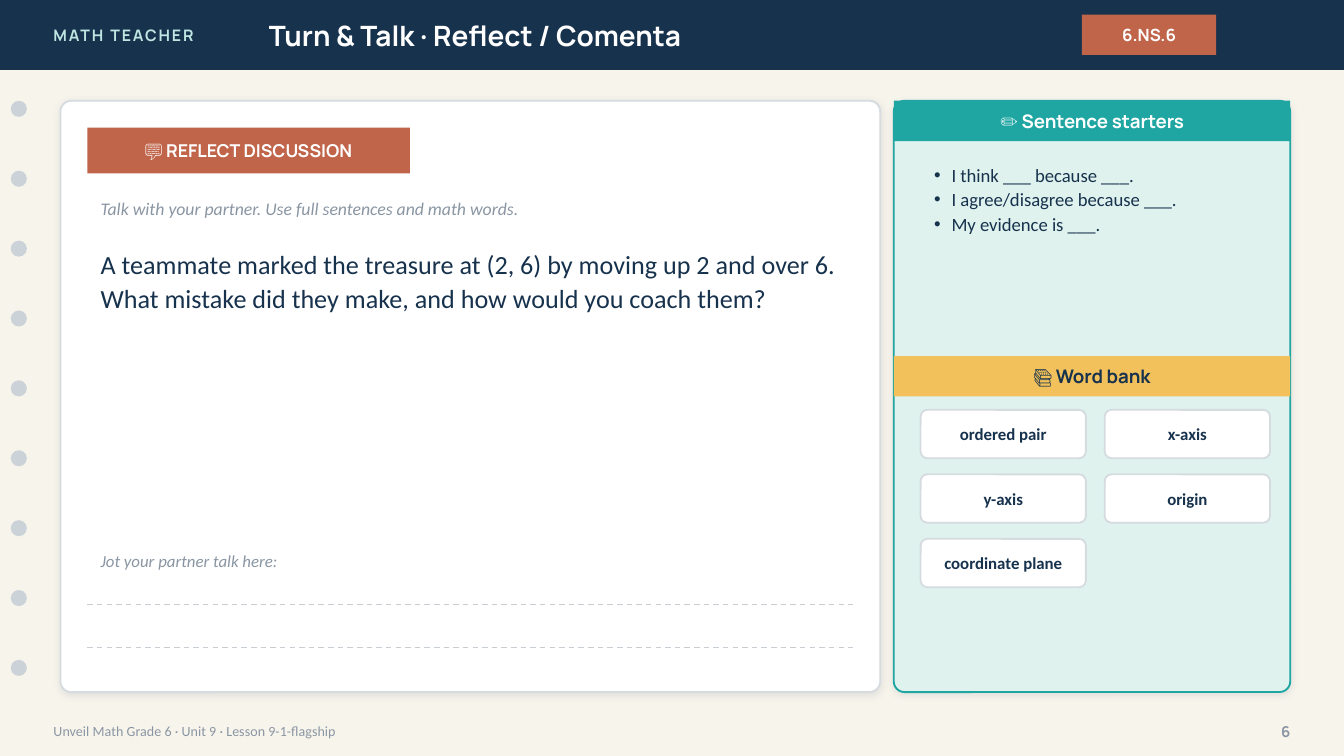
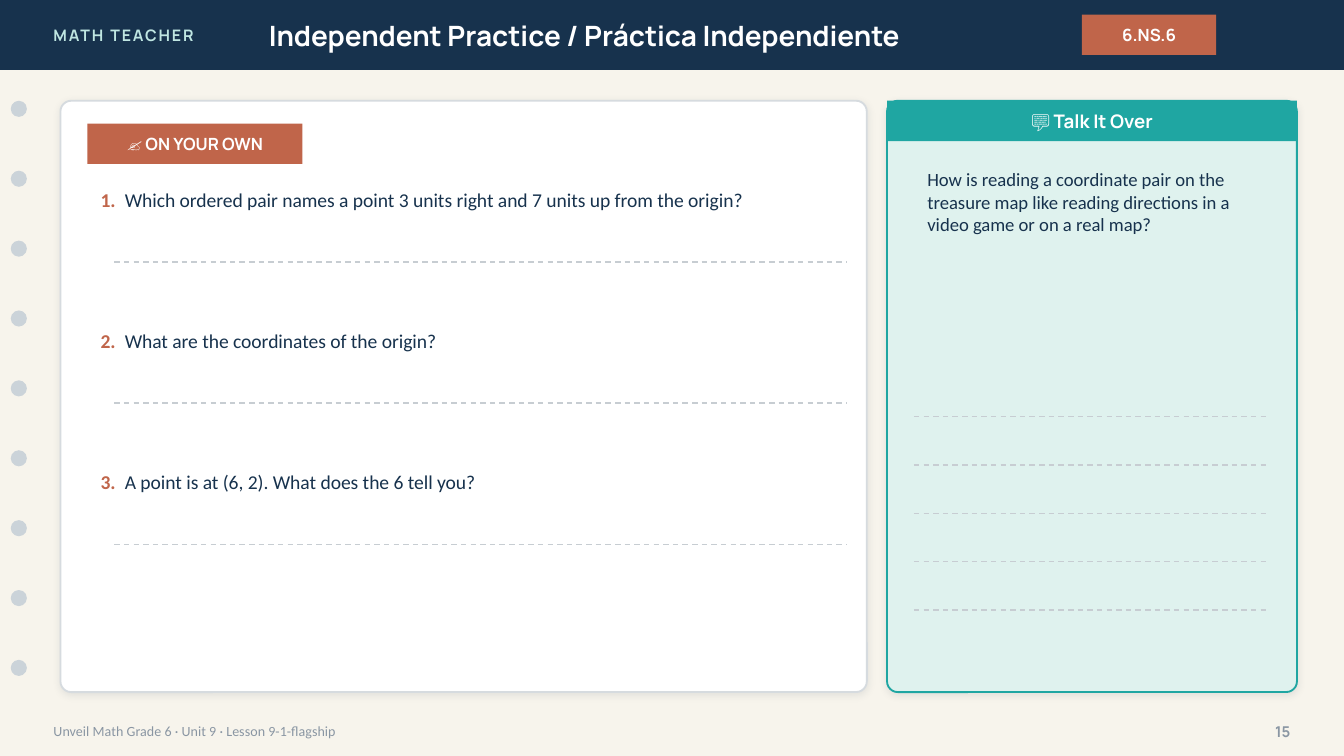
from dataclasses import dataclass, replace
from typing import NamedTuple, Optional

from lxml.etree import SubElement
from pptx import Presentation
from pptx.dml.color import RGBColor
from pptx.enum.dml import MSO_LINE
from pptx.enum.shapes import MSO_CONNECTOR, MSO_SHAPE
from pptx.enum.text import MSO_ANCHOR as Anchor, MSO_AUTO_SIZE, PP_ALIGN as Align
from pptx.oxml.ns import qn
from pptx.util import Emu, Pt

EMU_PER_PX = 9144
SLIDE_WIDTH = 1000

CREAM = RGBColor(0xF7, 0xF4, 0xEC)
NAVY = RGBColor(0x17, 0x32, 0x4D)
WHITE = RGBColor(0xFF, 0xFF, 0xFF)
MINT = RGBColor(0xBF, 0xE6, 0xE2)
PALE_MINT = RGBColor(0xDF, 0xF2, 0xEE)
TEAL = RGBColor(0x1F, 0xA6, 0xA2)
CLAY = RGBColor(0xC0, 0x65, 0x4A)
GOLD = RGBColor(0xF2, 0xC1, 0x5B)
SLATE = RGBColor(0x8A, 0x96, 0xA3)
HOLE_GREY = RGBColor(0xCB, 0xD3, 0xD9)
BORDER_GREY = RGBColor(0xD6, 0xDB, 0xDF)
RULE_GREY = RGBColor(0xC7, 0xCD, 0xD2)
SHADOW_INK = RGBColor(0x1C, 0x2E, 0x42)


class Box(NamedTuple):
    left: int
    top: int
    width: int
    height: int


@dataclass(frozen=True)
class Style:
    size: float
    color: RGBColor = NAVY
    font: str = "Calibri"
    bold: bool = False
    italic: bool = False
    align: Align = Align.LEFT
    anchor: Anchor = Anchor.TOP
    line_spacing: float = 1.0
    tracking: int = 0  # hundredths of a point


HEADING = Style(15, WHITE, "Manrope", bold=True, anchor=Anchor.MIDDLE)
SERIES = replace(HEADING, size=8.5, color=MINT, tracking=100)
BANNER = replace(HEADING, size=10, align=Align.CENTER)
TAG = replace(BANNER, size=9)
WIDE_TAG = replace(BANNER, size=9.5)
WORD_BANNER = replace(BANNER, color=NAVY)
FOOTER = Style(7.5, SLATE, anchor=Anchor.MIDDLE)
PAGE_NUMBER = replace(HEADING, size=8, color=SLATE, align=Align.RIGHT)
HINT = Style(9.5, SLATE, italic=True, anchor=Anchor.MIDDLE)
JOT_HINT = replace(HINT, size=9)
PROMPT = Style(14, line_spacing=1.08)
STARTER = Style(10, line_spacing=1.1)
TALK = Style(10)
WORD = Style(9, bold=True, align=Align.CENTER, anchor=Anchor.MIDDLE)
QUESTION = Style(10.5)
QUESTION_NUMBER = replace(QUESTION, color=CLAY, bold=True)


@dataclass(frozen=True)
class Lesson:
    title: str
    page: int


def px(length: int) -> Emu:
    return Emu(length * EMU_PER_PX)


def emu(box: Box) -> list[Emu]:
    return [px(length) for length in box]


def format_run(run, style: Style) -> None:
    run.font.size = Pt(style.size)
    run.font.name = style.font
    run.font.bold = style.bold
    run.font.italic = style.italic
    run.font.color.rgb = style.color
    if style.tracking:
        run._r.get_or_add_rPr().set("spc", str(style.tracking))


def write(frame, text: str, style: Style) -> None:
    frame.text = text
    frame.word_wrap = True
    frame.auto_size = MSO_AUTO_SIZE.NONE
    frame.vertical_anchor = style.anchor
    for paragraph in frame.paragraphs:
        paragraph.alignment = style.align
        paragraph.line_spacing = style.line_spacing
        paragraph.space_before = Pt(0)
        for run in paragraph.runs:
            format_run(run, style)


def hang(paragraph, indent: int, bullet: Optional[str] = None) -> None:
    """Give a paragraph a hanging indent, with a bullet or without."""
    properties = paragraph._p.get_or_add_pPr()
    properties.set("marL", str(px(indent)))
    properties.set("indent", str(px(-indent)))
    if bullet:
        SubElement(properties, qn("a:buChar")).set("char", bullet)
    else:
        SubElement(properties, qn("a:buNone"))


def add_text(slide, box: Box, text: str, style: Style):
    frame = slide.shapes.add_textbox(*emu(box)).text_frame
    write(frame, text, style)
    return frame


def fill_placeholder(placeholder, box: Box, text: str, style: Style):
    """Place a template placeholder above everything drawn so far."""
    placeholder.left, placeholder.top, placeholder.width, placeholder.height = emu(box)
    placeholder.element.getparent().append(placeholder.element)
    write(placeholder.text_frame, text, style)
    return placeholder.text_frame


def add_block(slide, box: Box, fill: RGBColor, kind=MSO_SHAPE.RECTANGLE,
              border: Optional[RGBColor] = None, radius: int = 0):
    block = slide.shapes.add_shape(kind, *emu(box))
    block.shadow.inherit = False
    block.fill.solid()
    block.fill.fore_color.rgb = fill
    if border is None:
        block.line.fill.background()
    else:
        block.line.color.rgb = border
        block.line.width = Pt(1)
    if radius:
        block.adjustments[0] = radius / min(box.width, box.height)
    return block


def add_label(slide, box: Box, text: str, fill: RGBColor, style: Style) -> None:
    write(add_block(slide, box, fill).text_frame, text, style)


def add_card(slide, box: Box, fill: RGBColor, border: RGBColor) -> None:
    """Draw a rounded card with a soft shadow below it."""
    card = add_block(slide, box, fill, MSO_SHAPE.ROUNDED_RECTANGLE, border, radius=8)
    effects = card.element.spPr.find(qn("a:effectLst"))
    shadow = SubElement(effects, qn("a:outerShdw"), blurRad=str(Pt(4)),
                        dist=str(Pt(1)), dir="5400000", algn="bl", rotWithShape="0")
    ink = SubElement(shadow, qn("a:srgbClr"), val=str(SHADOW_INK))
    SubElement(ink, qn("a:alpha"), val="10000")


def add_side_panel(slide, box: Box, heading: str) -> None:
    add_card(slide, box, PALE_MINT, TEAL)
    add_label(slide, box._replace(height=30), heading, TEAL, BANNER)


def add_writing_line(slide, left: int, right: int, y: int) -> None:
    rule = slide.shapes.add_connector(MSO_CONNECTOR.STRAIGHT,
                                      px(left), px(y), px(right), px(y))
    rule.line.color.rgb = RULE_GREY
    rule.line.width = Pt(0.75)
    rule.line.dash_style = MSO_LINE.DASH
    SubElement(rule.element.spPr, qn("a:effectLst"))


def add_lesson_slide(prs, lesson: Lesson):
    """Add a slide with header band, binder holes and footer."""
    slide = prs.slides.add_slide(prs.slide_layouts[1])
    add_block(slide, Box(0, 0, SLIDE_WIDTH, 52), NAVY)
    add_text(slide, Box(30, 0, 240, 52), "MATH TEACHER", SERIES)
    fill_placeholder(slide.shapes.title, Box(190, 0, 560, 52), lesson.title, HEADING)
    add_label(slide, Box(805, 11, 100, 30), "6.NS.6", CLAY, TAG)
    for hole in range(9):
        add_block(slide, Box(8, 75 + 52 * hole, 12, 12), HOLE_GREY, MSO_SHAPE.OVAL)
    add_text(slide, Box(30, 530, 700, 28),
             "Unveil Math Grade 6 · Unit 9 · Lesson 9-1-flagship", FOOTER)
    add_text(slide, Box(920, 530, 50, 28), str(lesson.page), PAGE_NUMBER)
    return slide


def build_turn_and_talk(prs) -> None:
    slide = add_lesson_slide(prs, Lesson("Turn & Talk · Reflect / Comenta", 6))
    add_card(slide, Box(45, 75, 610, 440), WHITE, BORDER_GREY)
    add_label(slide, Box(65, 95, 240, 34), "💬 REFLECT DISCUSSION", CLAY, WIDE_TAG)
    add_text(slide, Box(65, 140, 570, 30),
             "Talk with your partner. Use full sentences and math words.", HINT)
    add_text(slide, Box(65, 178, 570, 200),
             "A teammate marked the treasure at (2, 6) by moving up 2 and over 6. "
             "What mistake did they make, and how would you coach them?", PROMPT)
    add_text(slide, Box(65, 405, 570, 25), "Jot your partner talk here:", JOT_HINT)
    for y in (450, 482):
        add_writing_line(slide, 65, 635, y)

    panel = Box(665, 75, 295, 440)
    add_side_panel(slide, panel, "✏️ Sentence starters")
    starters = fill_placeholder(
        slide.placeholders[1], Box(685, 115, 260, 140),
        "I think ___ because ___.\n"
        "I agree/disagree because ___.\n"
        "My evidence is ___.", STARTER)
    for starter in starters.paragraphs:
        hang(starter, 13, "•")

    add_label(slide, panel._replace(top=265, height=30), "📚 Word bank", GOLD, WORD_BANNER)
    words = ("ordered pair", "x-axis", "y-axis", "origin", "coordinate plane")
    for index, word in enumerate(words):
        row, column = divmod(index, 2)
        chip = add_block(slide, Box(685 + 137 * column, 305 + 48 * row, 123, 36), WHITE,
                         MSO_SHAPE.ROUNDED_RECTANGLE, BORDER_GREY, radius=5)
        write(chip.text_frame, word, WORD)


def build_independent_practice(prs) -> None:
    slide = add_lesson_slide(
        prs, Lesson("Independent Practice / Práctica Independiente", 15))
    add_card(slide, Box(45, 75, 600, 440), WHITE, BORDER_GREY)
    add_label(slide, Box(65, 92, 160, 30), "✍️ ON YOUR OWN", CLAY, TAG)
    questions = (
        "Which ordered pair names a point 3 units right and 7 units up from the origin?",
        "What are the coordinates of the origin?",
        "A point is at (6, 2). What does the 6 tell you?",
    )
    for index, question in enumerate(questions):
        top = 135 + 105 * index
        frame = add_text(slide, Box(65, top, 565, 50), f"{index + 1}.\t", QUESTION_NUMBER)
        line = frame.paragraphs[0]
        hang(line, 18)
        wording = line.add_run()
        wording.text = question
        format_run(wording, QUESTION)
        add_writing_line(slide, 85, 630, top + 60)

    add_side_panel(slide, Box(660, 75, 305, 440), "💬 Talk It Over")
    talk = fill_placeholder(
        slide.placeholders[1], Box(680, 120, 270, 170),
        "How is reading a coordinate pair on the treasure map like reading "
        "directions in a video game or on a real map?", TALK)
    hang(talk.paragraphs[0], 0)
    for row in range(5):
        add_writing_line(slide, 680, 945, 310 + 36 * row)


def main() -> None:
    prs = Presentation()
    prs.slide_width = px(SLIDE_WIDTH)
    prs.slide_height = Emu(prs.slide_width * 9 // 16)
    backdrop = prs.slide_master.background.fill
    backdrop.solid()
    backdrop.fore_color.rgb = CREAM
    build_turn_and_talk(prs)
    build_independent_practice(prs)
    prs.save("out.pptx")


if __name__ == "__main__":
    main()
